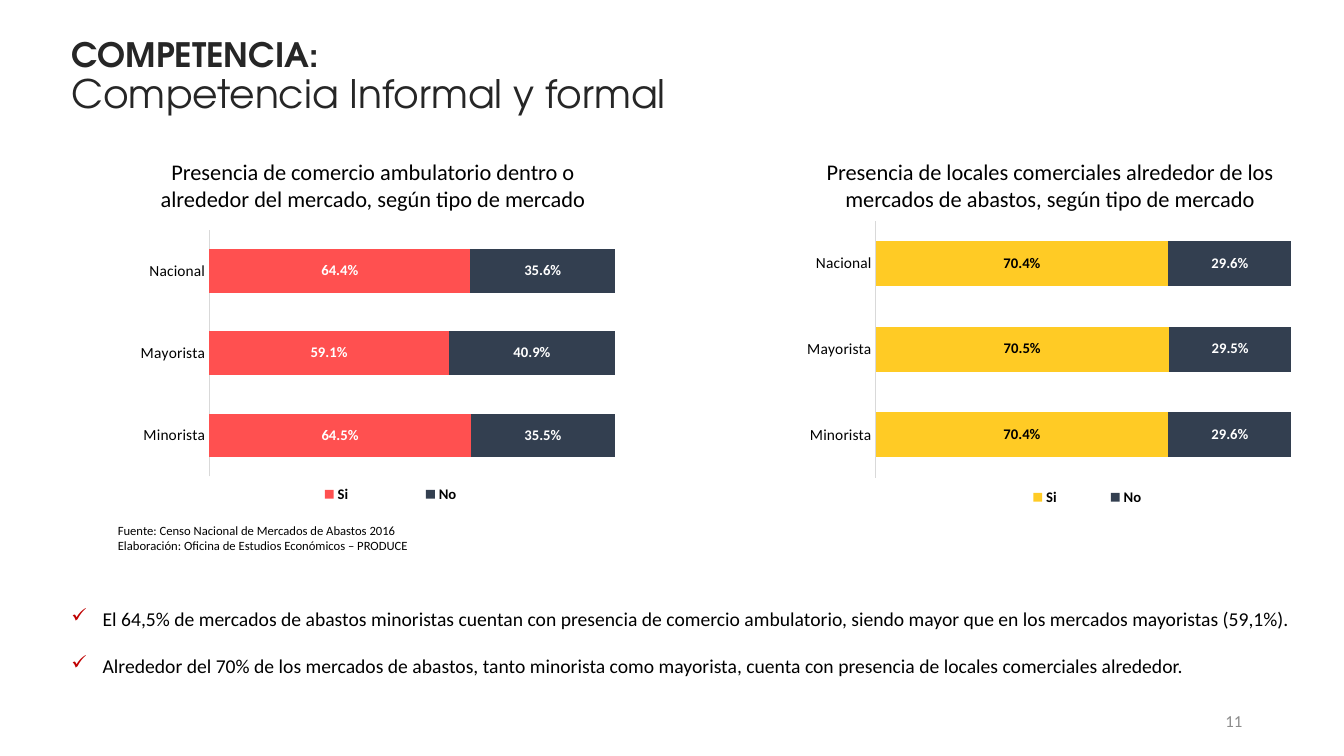
from lxml import etree
from pptx import Presentation
from pptx.chart.data import CategoryChartData
from pptx.dml.color import RGBColor
from pptx.enum.chart import XL_CHART_TYPE, XL_LEGEND_POSITION, XL_TICK_MARK
from pptx.enum.text import MSO_ANCHOR, PP_ALIGN
from pptx.oxml import parse_xml
from pptx.oxml.ns import nsdecls, qn
from pptx.util import Inches, Pt

BLACK = RGBColor(0x00, 0x00, 0x00)
WHITE = RGBColor(0xFF, 0xFF, 0xFF)
TITLE_GRAY = RGBColor(0x26, 0x26, 0x26)
NUMBER_GRAY = RGBColor(0x8C, 0x8C, 0x8C)
AXIS_GRAY = RGBColor(0xD9, 0xD9, 0xD9)
RED = RGBColor(0xFF, 0x50, 0x50)
YELLOW = RGBColor(0xFF, 0xCB, 0x25)
NAVY = RGBColor(0x33, 0x3F, 0x50)
CHECK_RED = RGBColor(0xC0, 0x00, 0x00)
BODY_FONT = "Calibri"
TITLE_FONT = "TeX Gyre Adventor"

MARKET_TYPES = ["Minorista", "Mayorista", "Nacional"]
SOURCE = [
    "Fuente: Censo Nacional de Mercados de Abastos 2016",
    "Elaboración: Oficina de Estudios Económicos – PRODUCE",
]
FINDINGS = [
    "El 64,5% de mercados de abastos minoristas cuentan con presencia de comercio "
    "ambulatorio, siendo mayor que en los mercados mayoristas (59,1%).",
    "Alrededor del 70% de los mercados de abastos, tanto minorista como mayorista, "
    "cuenta con presencia de locales comerciales alrededor.",
]


def style_font(font, size, color=BLACK, bold=False, name=BODY_FONT):
    """Set the face, size, colour and weight of a font."""
    font.name = name
    font.size = Pt(size)
    font.bold = bold
    font.color.rgb = color


def add_frame(slide, left, top, width, height, anchor=MSO_ANCHOR.TOP):
    """Add a wrapping text box and return its text frame."""
    box = slide.shapes.add_textbox(
        Inches(left), Inches(top), Inches(width), Inches(height))
    box.text_frame.word_wrap = True
    box.text_frame.vertical_anchor = anchor
    return box.text_frame


def add_text(slide, place, lines, size, color=BLACK, align=PP_ALIGN.LEFT,
             anchor=MSO_ANCHOR.TOP):
    """Add uniformly styled paragraphs and return them."""
    frame = add_frame(slide, *place, anchor=anchor)
    frame.text = "\n".join(lines)
    for paragraph in frame.paragraphs:
        paragraph.alignment = align
        style_font(paragraph.font, size, color)
    return frame.paragraphs


def add_title(slide):
    """Add the two-line slide title."""
    frame = add_frame(slide, 0.61, 0.25, 12.44, 1.05, MSO_ANCHOR.MIDDLE)
    title = frame.paragraphs[0]
    title.line_spacing = 0.9
    topic = title.add_run()
    topic.text = "COMPETENCIA:"
    style_font(topic.font, 24, TITLE_GRAY, True, TITLE_FONT)
    title.add_line_break()
    subtopic = title.add_run()
    subtopic.text = "Competencia Informal y formal"
    style_font(subtopic.font, 28, TITLE_GRAY, False, TITLE_FONT)


def add_findings(slide):
    """Add the findings as a list with check marks."""
    frame = add_frame(slide, 0.61, 5.97, 12.3, 0.81)
    frame.text = "\n".join(FINDINGS)
    for index, finding in enumerate(frame.paragraphs):
        properties = finding._p.get_or_add_pPr()
        properties.set("marL", str(Inches(0.31)))
        properties.set("indent", str(-Inches(0.31)))
        if index:
            finding.space_before = Pt(17)
        bullet_color = etree.SubElement(properties, qn("a:buClr"))
        etree.SubElement(bullet_color, qn("a:srgbClr"), val=str(CHECK_RED))
        etree.SubElement(properties, qn("a:buChar"), char="✓")
        style_font(finding.font, 14)


def layout_xml(x, y, width, height, inner=False):
    """Build a manual chart layout from fractions of the chart."""
    target = '<c:layoutTarget val="inner"/>' if inner else ""
    return parse_xml(
        f'<c:layout {nsdecls("c")}><c:manualLayout>{target}'
        '<c:xMode val="edge"/><c:yMode val="edge"/>'
        f'<c:x val="{x}"/><c:y val="{y}"/>'
        f'<c:w val="{width}"/><c:h val="{height}"/>'
        '</c:manualLayout></c:layout>')


def add_share_chart(slide, left, yes_shares, no_shares, yes_color,
                    yes_label_color, plot_place, legend_place):
    """Add a stacked bar chart of yes and no shares by market type."""
    shares = CategoryChartData(number_format="0.0%")
    shares.categories = MARKET_TYPES
    shares.add_series("Si", yes_shares)
    shares.add_series("No", no_shares)
    chart = slide.shapes.add_chart(
        XL_CHART_TYPE.BAR_STACKED_100, Inches(left), Inches(2.13),
        Inches(5), Inches(3), shares).chart
    style_font(chart.font, 10)
    chart.has_title = False

    market_axis = chart.category_axis
    market_axis.major_tick_mark = XL_TICK_MARK.NONE
    market_axis.minor_tick_mark = XL_TICK_MARK.NONE
    market_axis.format.line.color.rgb = AXIS_GRAY
    market_axis.format.line.width = Pt(0.75)
    style_font(market_axis.tick_labels.font, 11)
    chart.value_axis.has_major_gridlines = False
    chart.value_axis.visible = False

    plot = chart.plots[0]
    plot.gap_width = 90
    plot.overlap = 100
    plot.vary_by_categories = False
    colors = [(yes_color, yes_label_color), (NAVY, WHITE)]
    for series, (fill_color, label_color) in zip(plot.series, colors):
        series.format.fill.solid()
        series.format.fill.fore_color.rgb = fill_color
        labels = series.data_labels
        labels.show_value = True
        labels.number_format = "0.0%"
        labels.number_format_is_linked = False
        style_font(labels.font, 10.5, label_color, True)

    chart.has_legend = True
    legend = chart.legend
    legend.position = XL_LEGEND_POSITION.BOTTOM
    legend.include_in_layout = False
    style_font(legend.font, 10.5, bold=True)
    for part, layout in [
            (chart._chartSpace.chart.plotArea, layout_xml(*plot_place, inner=True)),
            (legend._element, layout_xml(*legend_place))]:
        for automatic in part.findall(qn("c:layout")):
            part.remove(automatic)
        position = part.find(qn("c:legendPos"))
        part.insert(0 if position is None else 1, layout)


def main():
    """Build the slide and save it."""
    presentation = Presentation()
    presentation.slide_width = Inches(13.33)
    presentation.slide_height = Inches(7.5)
    slide = presentation.slides.add_slide(presentation.slide_layouts[6])

    add_title(slide)
    add_text(slide, (1.15, 1.52, 5.1, 0.64),
             ["Presencia de comercio ambulatorio dentro o alrededor del mercado, "
              "según tipo de mercado"], 16, align=PP_ALIGN.CENTER)
    add_text(slide, (8.07, 1.52, 4.69, 0.64),
             ["Presencia de locales comerciales alrededor de los mercados de "
              "abastos, según tipo de mercado"], 16, align=PP_ALIGN.CENTER)
    add_share_chart(slide, 1.25, (0.645, 0.591, 0.644), (0.355, 0.409, 0.356),
                    RED, WHITE, (0.165, 0.05, 0.805, 0.816),
                    (0.25, 0.88, 0.55, 0.09))
    add_share_chart(slide, 7.91, (0.704, 0.705, 0.704), (0.296, 0.295, 0.296),
                    YELLOW, BLACK, (0.155, 0.02, 0.825, 0.85),
                    (0.37, 0.89, 0.41, 0.09))
    add_text(slide, (1.07, 5.14, 5.89, 0.4), SOURCE, 9)
    add_findings(slide)
    add_text(slide, (9.42, 6.95, 3, 0.4), ["11"], 12, NUMBER_GRAY,
             PP_ALIGN.RIGHT, MSO_ANCHOR.MIDDLE)
    presentation.save("out.pptx")


if __name__ == "__main__":
    main()
